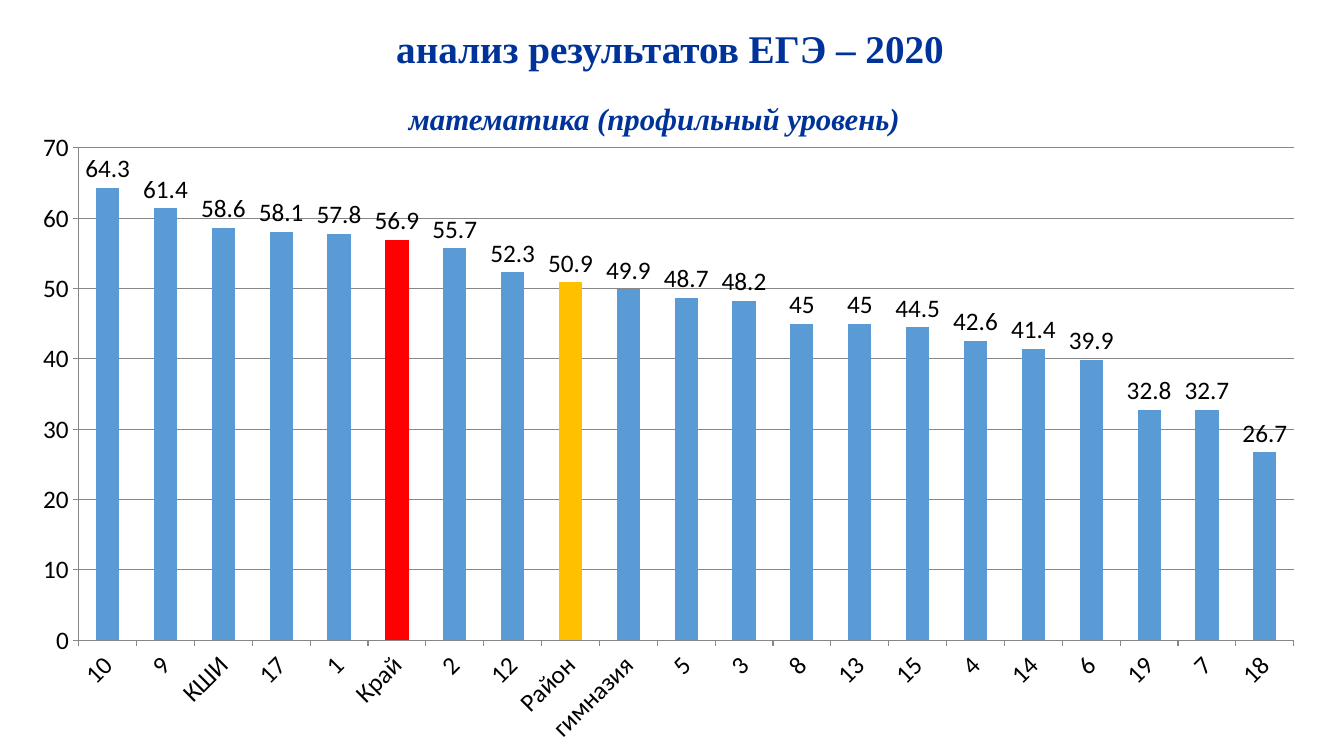
from dataclasses import dataclass

from pptx import Presentation
from pptx.chart.data import CategoryChartData
from pptx.dml.color import RGBColor
from pptx.enum.chart import XL_CHART_TYPE, XL_LABEL_POSITION, XL_TICK_MARK
from pptx.enum.text import MSO_ANCHOR, PP_ALIGN
from pptx.util import Inches, Pt


@dataclass(frozen=True)
class Theme:
    navy: str = "003399"
    black: str = "000000"
    grid: str = "878787"
    bar: str = "5B9BD5"
    region: str = "FF0000"
    district: str = "FFC000"
    serif: str = "Times New Roman"
    sans: str = "Calibri"
    title: int = 28
    sub: int = 22
    label: int = 18


THEME = Theme()

SCORES = [
    ("10", 64.3), ("9", 61.4), ("КШИ", 58.6), ("17", 58.1), ("1", 57.8),
    ("Край", 56.9), ("2", 55.7), ("12", 52.3), ("Район", 50.9),
    ("гимназия", 49.9), ("5", 48.7), ("3", 48.2), ("8", 45), ("13", 45),
    ("15", 44.5), ("4", 42.6), ("14", 41.4), ("6", 39.9), ("19", 32.8),
    ("7", 32.7), ("18", 26.7),
]
ACCENTS = {"Край": THEME.region, "Район": THEME.district}


def paint(fill, color):
    fill.solid()
    fill.fore_color.rgb = RGBColor.from_string(color)


def add_text(slide, box, text, size, italic=False, anchor=MSO_ANCHOR.TOP,
             inset=(0.1, 0.05), spacing=1.0):
    frame = slide.shapes.add_textbox(*map(Inches, box)).text_frame
    frame.word_wrap = True
    frame.vertical_anchor = anchor
    frame.margin_left = frame.margin_right = Inches(inset[0])
    frame.margin_top = frame.margin_bottom = Inches(inset[1])
    para = frame.paragraphs[0]
    para.alignment = PP_ALIGN.CENTER
    para.line_spacing = spacing
    run = para.add_run()
    run.text = text
    run.font.name = THEME.serif
    run.font.size = Pt(size)
    run.font.bold = True
    run.font.italic = italic
    run.font.color.rgb = RGBColor.from_string(THEME.navy)


def add_head(slide, box):
    left, top, width, height = box
    add_text(slide, (left, top, width, 0.38), "анализ результатов ЕГЭ – 2020",
             THEME.title, anchor=MSO_ANCHOR.MIDDLE, inset=(0, 0), spacing=0.9)
    add_text(slide, (left + 1.02, top + height - 0.54, 6.14, 0.54),
             "математика (профильный уровень)", THEME.sub, italic=True)


def style_axis(axis):
    axis.major_tick_mark = XL_TICK_MARK.OUTSIDE
    axis.minor_tick_mark = XL_TICK_MARK.NONE
    paint(axis.format.line.fill, THEME.grid)
    axis.tick_labels.font.size = Pt(THEME.label)


def add_scores(slide, box):
    data = CategoryChartData()
    data.categories = [name for name, score in SCORES]
    data.add_series("Series 1", [score for name, score in SCORES])
    chart = slide.shapes.add_chart(
        XL_CHART_TYPE.COLUMN_CLUSTERED, *map(Inches, box), data).chart
    chart.has_legend = False
    chart.has_title = False
    chart.font.name = THEME.sans
    chart.font.size = Pt(THEME.label)
    chart.font.color.rgb = RGBColor.from_string(THEME.black)

    names, values = chart.category_axis, chart.value_axis
    style_axis(names)
    style_axis(values)
    names._element.txPr.bodyPr.set("rot", "-2700000")
    values.minimum_scale, values.maximum_scale = 0, 70
    values.major_unit = 10
    values.has_major_gridlines = True
    paint(values.major_gridlines.format.line.fill, THEME.grid)

    plot = chart.plots[0]
    plot.gap_width = 150
    plot.vary_by_categories = False
    plot.has_data_labels = True
    labels = plot.data_labels
    labels.show_value = True
    labels.position = XL_LABEL_POSITION.OUTSIDE_END
    labels.font.size = Pt(THEME.label)

    series = plot.series[0]
    paint(series.format.fill, THEME.bar)
    for index, (name, score) in enumerate(SCORES):
        if name in ACCENTS:
            paint(series.points[index].format.fill, ACCENTS[name])


def main():
    deck = Presentation()
    deck.slide_width, deck.slide_height = Inches(13.33), Inches(7.5)
    slide = deck.slides.add_slide(deck.slide_layouts[6])
    add_head(slide, (2.4, 0.31, 8.49, 1.17))
    add_scores(slide, (0.17, 1.19, 12.92, 6.31))
    deck.save("out.pptx")


if __name__ == "__main__":
    main()
